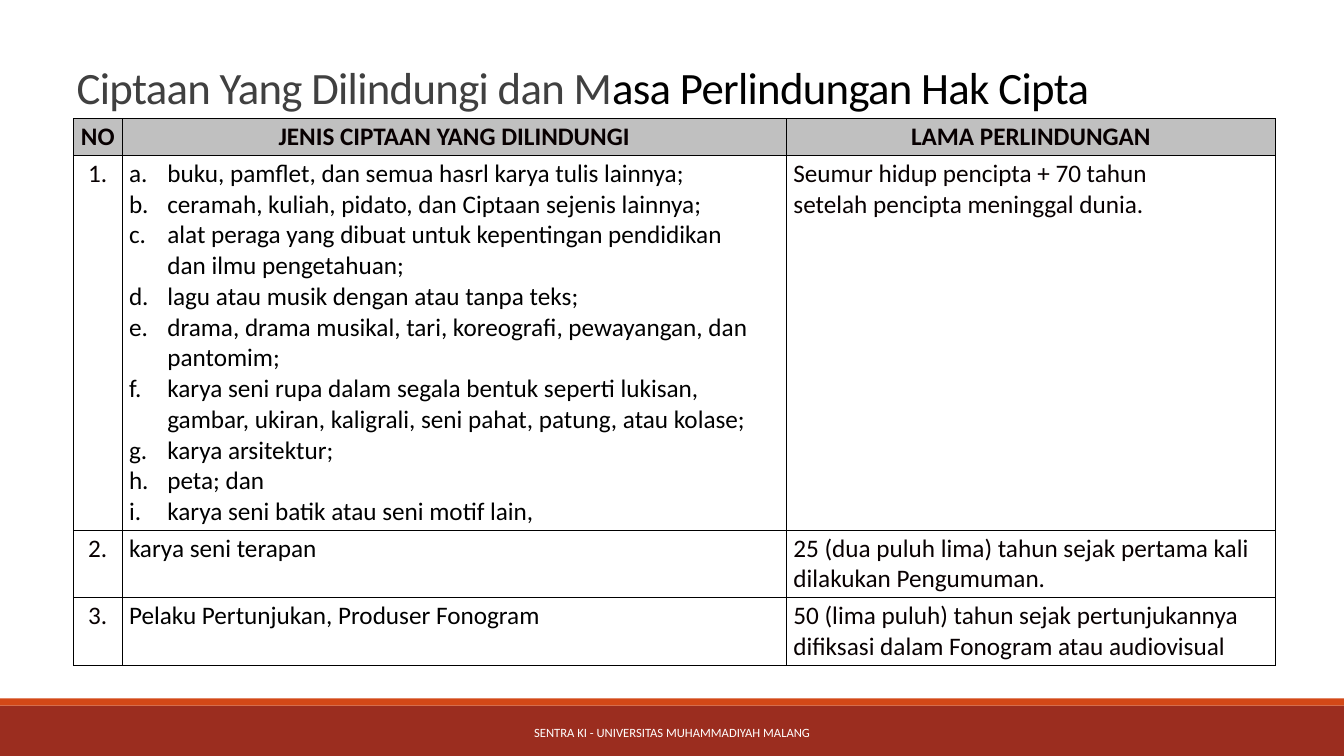
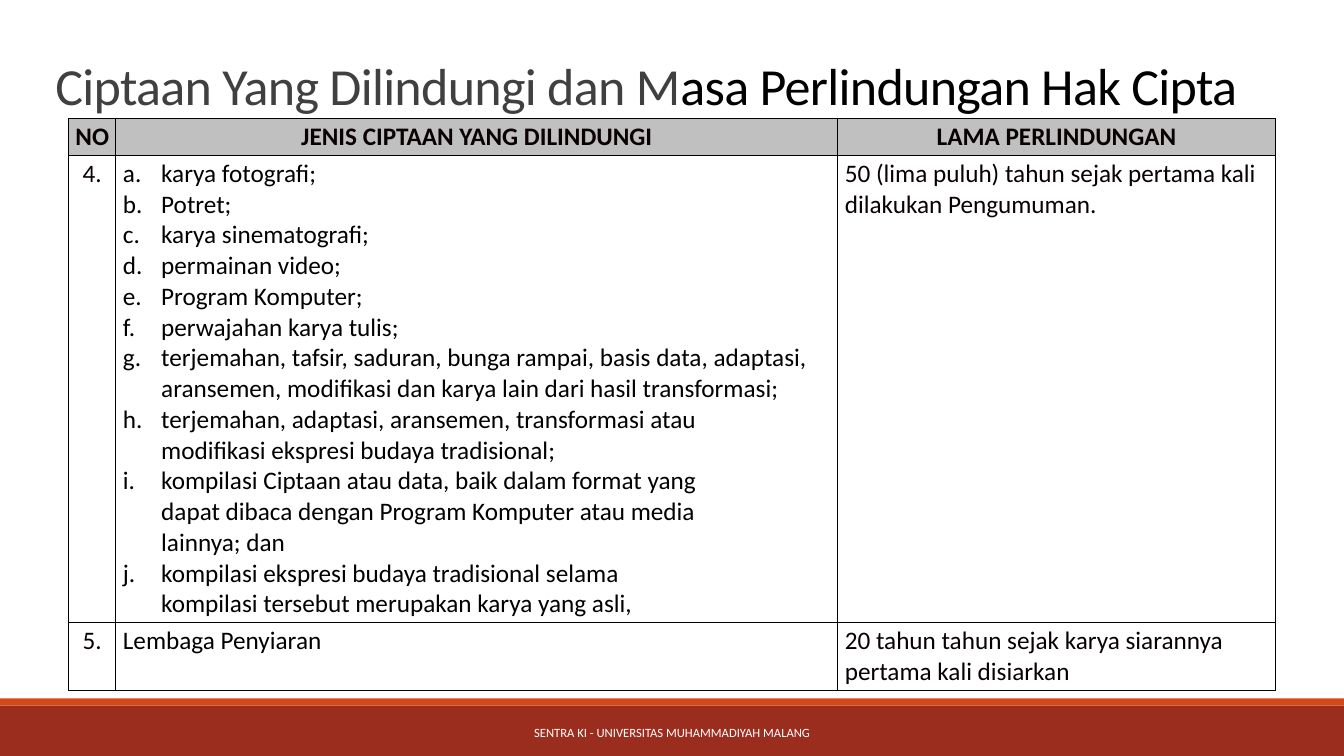
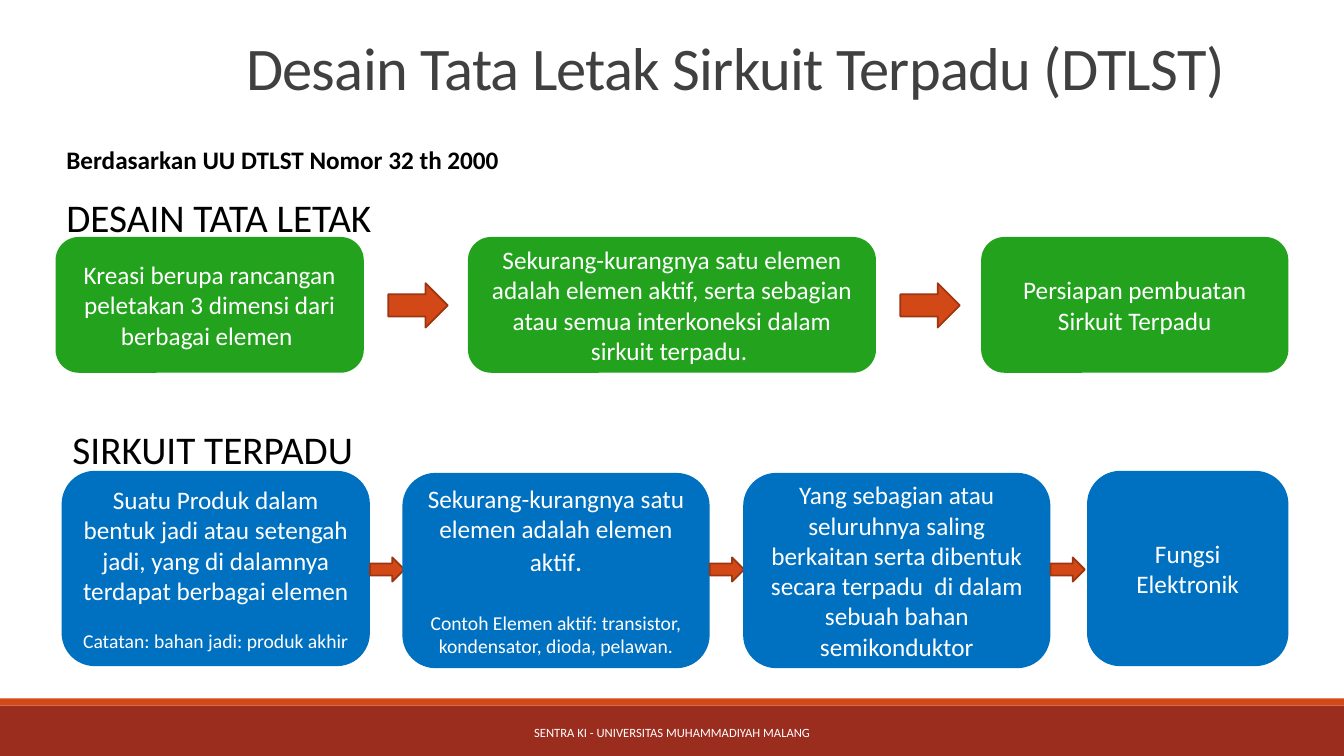
from lxml import etree
from pptx import Presentation
from pptx.dml.color import RGBColor
from pptx.enum.shapes import MSO_SHAPE
from pptx.enum.text import MSO_ANCHOR, MSO_AUTO_SIZE, PP_ALIGN
from pptx.oxml.ns import qn
from pptx.util import Pt

RECT, ROUND, ARROW = MSO_SHAPE.RECTANGLE, MSO_SHAPE.ROUNDED_RECTANGLE, MSO_SHAPE.RIGHT_ARROW
TOP, MIDDLE, BOTTOM = MSO_ANCHOR.TOP, MSO_ANCHOR.MIDDLE, MSO_ANCHOR.BOTTOM
LEFT, CENTER = PP_ALIGN.LEFT, PP_ALIGN.CENTER
NO_FIT = MSO_AUTO_SIZE.NONE

FONT = "Calibri"
SLIDE_W, SLIDE_H = 1333, 750
COLORS = {
    "black": "000000", "white": "FFFFFF", "ink": "080001", "title": "404040",
    "band": "9B2D1F", "accent": "D34817", "accent_line": "9C3511",
    "header": "C0C0C0", "green": "23A31D", "blue": "0070C0",
}
FOOTER = "SENTRA KI - UNIVERSITAS MUHAMMADIYAH MALANG"


def px(n):
    """100 px to the inch."""
    return round(n * 9144)


def rgb(name):
    return RGBColor.from_string(COLORS[name])


def hard(text):
    """Keep words together with no-break spaces."""
    return text.replace(" ", chr(160))


# ---- Building blocks ----
def add_text(p, text, size=18, color="black", bold=False, spc=None,
             align=LEFT, before=0, spacing=None):
    p.alignment = align
    p.space_before = Pt(before)
    if spacing:
        p.line_spacing = spacing
    for i, line in enumerate(text.split("\n")):
        if i:
            p.add_line_break()
        r = p.add_run()
        r.text = line
        r.font.name, r.font.size, r.font.bold = FONT, Pt(size), bold
        r.font.color.rgb = rgb(color)
        if spc is not None:
            r._r.get_or_add_rPr().set("spc", str(spc))


def next_paragraph(tf, i):
    return tf.add_paragraph() if i else tf.paragraphs[0]


def add_box(s, kind, box, fill, line=None):
    sp = s.shapes.add_shape(kind, *map(px, box))
    sp.shadow.inherit = False
    sp.fill.solid()
    sp.fill.fore_color.rgb = rgb(fill)
    if line:
        sp.line.color.rgb = rgb(line)
        sp.line.width = Pt(1.25)
    else:
        sp.line.fill.background()
    return sp


def add_label(s, box, text, anchor=TOP, wrap=True, **fmt):
    tf = s.shapes.add_textbox(*map(px, box)).text_frame
    tf.word_wrap, tf.vertical_anchor = wrap, anchor
    add_text(tf.paragraphs[0], text, **fmt)


# ---- Shared frame ----
def add_bands(prs, s):
    """Draw the bottom bands and move them to the master."""
    tree = prs.slide_master.shapes.element
    for i, (top, height, fill) in enumerate([(700, 50, "band"), (693, 7, "accent")]):
        el = add_box(s, RECT, (0, top, SLIDE_W, height), fill).element
        el.nvSpPr.cNvPr.set("id", str(101 + i))
        tree.insert(2 + i, el)


def new_slide(prs, title_box, runs, size, spacing=0.85):
    s = prs.slides.add_slide(prs.slide_layouts.get_by_name("Title Only"))
    title = s.shapes.title
    title.left, title.top, title.width, title.height = map(px, title_box)
    tf = title.text_frame
    tf.auto_size, tf.word_wrap, tf.vertical_anchor = NO_FIT, True, BOTTOM
    for text, color in runs:
        add_text(tf.paragraphs[0], text, size=size, color=color, spc=-50, spacing=spacing)
    add_label(s, (403, 707, 527, 40), FOOTER, anchor=MIDDLE, size=9, color="white", align=CENTER)
    return s


# ---- Table of protected works ----
def set_borders(cell):
    tc_pr = cell._tc.get_or_add_tcPr()
    for side in ("lnL", "lnR", "lnT", "lnB"):
        ln = etree.SubElement(tc_pr, qn(f"a:{side}"), w=str(Pt(0.75)))
        fill = etree.SubElement(ln, qn("a:solidFill"))
        etree.SubElement(fill, qn("a:srgbClr"), val=COLORS["black"])


def set_lettered(p):
    p_pr = p._p.get_or_add_pPr()
    p_pr.set("marL", str(px(38)))
    p_pr.set("indent", str(-px(38)))
    etree.SubElement(p_pr, qn("a:buFont"), typeface="+mj-lt")
    etree.SubElement(p_pr, qn("a:buAutoNum"), type="alphaLcPeriod")


def fill_cell(cell, content, header, column):
    set_borders(cell)
    cell.margin_left = cell.margin_right = px(7 if column else 5)
    cell.margin_top = cell.margin_bottom = px(3)
    cell.vertical_anchor = MIDDLE if header else TOP
    if header:
        cell.fill.solid()
        cell.fill.fore_color.rgb = rgb("header")
    else:
        cell.fill.background()
    lettered = isinstance(content, list)
    for i, text in enumerate(content if lettered else [content]):
        p = next_paragraph(cell.text_frame, i)
        add_text(p, text, bold=header, align=CENTER if header or column == 0 else LEFT,
                 color="black" if column == 1 and not header else "ink")
        if lettered:
            set_lettered(p)


def add_works_table(s, left, top, widths, heights, rows):
    header = ("NO", hard("JENIS CIPTAAN YANG DILINDUNGI"), hard("LAMA PERLINDUNGAN"))
    table = s.shapes.add_table(len(heights), len(widths), px(left), px(top),
                               px(sum(widths)), px(sum(heights))).table
    table.first_row = table.horz_banding = False
    for column, width in zip(table.columns, widths):
        column.width = px(width)
    for row, height in zip(table.rows, heights):
        row.height = px(height)
    for i, row in enumerate([header, *rows]):
        for j, content in enumerate(row):
            fill_cell(table.cell(i, j), content, i == 0, j)


# ---- Row of steps joined by block arrows ----
def add_flow(s, left, top, height, color, steps, arrow):
    """steps: (x, y, width, paragraphs); arrow: (gap, width, height)."""
    gap, arrow_w, arrow_h = arrow
    for i, (x, y, width, paragraphs) in enumerate(steps):
        tf = add_box(s, ROUND, (left + x, top + y, width, height), color, color).text_frame
        tf.word_wrap, tf.vertical_anchor = True, MIDDLE
        for k, runs in enumerate(paragraphs):
            p = next_paragraph(tf, k)
            for text, fmt in runs:
                add_text(p, text, color="white", align=CENTER, **fmt)
        if i < len(steps) - 1:
            add_box(s, ARROW, (left + x + width + gap, top + (height - arrow_h) // 2 + 1,
                               arrow_w, arrow_h), "accent", "accent_line")


# ---- Slides ----
WORKS_TITLE = [("Ciptaan Yang Dilindungi dan M", "title"),
               ("asa Perlindungan Hak Cipta", "black")]


def works_slide_1(prs):
    s = new_slide(prs, (66, 26, 1202, 92), WORKS_TITLE, 32)
    add_works_table(s, 73, 118, (48, 659, 485), (36, 372, 67, 67), [
        ("1.", [
            "buku, pamflet, dan semua hasrl karya tulis lainnya;",
            "ceramah, kuliah, pidato, dan Ciptaan sejenis lainnya;",
            "alat peraga yang dibuat untuk kepentingan pendidikan\ndan ilmu pengetahuan;",
            "lagu atau musik dengan atau tanpa teks;",
            "drama, drama musikal, tari, koreografi, pewayangan, dan pantomim;",
            "karya seni rupa dalam segala bentuk seperti lukisan, gambar, ukiran, "
            "kaligrali, seni pahat, patung, atau kolase;",
            "karya arsitektur;",
            "peta; dan",
            "karya seni batik atau seni motif lain,",
        ], " ".join([hard("Seumur hidup pencipta + 70 tahun"),
                     hard("setelah pencipta meninggal"), "dunia."])),
        ("2.", "karya seni terapan",
         "25 (dua puluh lima) tahun sejak pertama kali dilakukan Pengumuman."),
        ("3.", "Pelaku Pertunjukan, Produser Fonogram",
         "50 (lima puluh) tahun sejak pertunjukannya difiksasi dalam Fonogram atau audiovisual"),
    ])
    return s


def works_slide_2(prs):
    s = new_slide(prs, (45, 26, 1222, 92), WORKS_TITLE, 37.2, 0.65)
    add_works_table(s, 68, 118, (47, 716, 434), (36, 464, 67), [
        ("4.", [
            "karya fotografi;",
            "Potret;",
            "karya sinematografi;",
            "permainan video;",
            "Program Komputer;",
            "perwajahan karya tulis;",
            "terjemahan, tafsir, saduran, bunga rampai, basis data, adaptasi, "
            "aransemen, modifikasi dan karya lain dari hasil transformasi;",
            "terjemahan, adaptasi, aransemen, transformasi atau\n"
            "modifikasi ekspresi budaya tradisional;",
            "kompilasi Ciptaan atau data, baik dalam format yang\n"
            "dapat dibaca dengan Program Komputer atau media\nlainnya; dan",
            "kompilasi ekspresi budaya tradisional selama\n"
            "kompilasi tersebut merupakan karya yang asli,",
        ], "50 (lima puluh) tahun sejak pertama kali dilakukan Pengumuman."),
        ("5.", "Lembaga Penyiaran",
         "20 tahun tahun sejak karya siarannya pertama kali disiarkan"),
    ])


def circuit_slide(prs):
    s = new_slide(prs, (234, 32, 1099, 75),
                  [("Desain Tata Letak Sirkuit Terpadu (DTLST)", "title")], 43.2)
    add_label(s, (56, 138, 453, 40), "Berdasarkan UU DTLST Nomor 32 th 2000",
              wrap=False, bold=True)

    # Layout design
    add_flow(s, 56, 236, 133, "green", [
        (0, 0, 304, [[("Kreasi berupa rancangan peletakan 3 dimensi dari berbagai elemen ", {})]]),
        (409, 0, 403, [[("Sekurang-kurangnya satu elemen adalah elemen aktif, serta sebagian "
                         "atau semua interkoneksi dalam sirkuit terpadu. ", {})]]),
        (918, 0, 303, [[("Persiapan pembuatan Sirkuit Terpadu", {})]]),
    ], (25, 59, 44))
    add_label(s, (56, 187, 326, 57), "DESAIN TATA LETAK", wrap=False, size=28)

    # Integrated circuit
    add_flow(s, 62, 468, 192, "blue", [
        (0, 0, 304, [
            [("Suatu Produk dalam bentuk jadi atau setengah jadi, "
              "yang di dalamnya terdapat berbagai elemen", {})],
            [("Catatan: bahan jadi: produk akhir", {"size": 14, "before": 17})]]),
        (338, 2, 303, [
            [("Sekurang-kurangnya satu elemen adalah elemen aktif", {}), (".", {"size": 20})],
            [("Contoh Elemen aktif: transistor, kondensator, dioda, pelawan.",
              {"size": 14, "before": 24})]]),
        (676, 2, 303, [[("Yang sebagian atau seluruhnya saling berkaitan serta dibentuk "
                         "secara terpadu  di dalam sebuah bahan semikonduktor", {})]]),
        (1017, 0, 198, [[("Fungsi Elektronik", {})]]),
    ], (1, 34, 24))
    add_label(s, (62, 417, 375, 57), "SIRKUIT TERPADU", size=28)


def main():
    prs = Presentation()
    prs.slide_width, prs.slide_height = px(SLIDE_W), px(SLIDE_H)
    add_bands(prs, works_slide_1(prs))
    works_slide_2(prs)
    circuit_slide(prs)
    prs.save("out.pptx")


if __name__ == "__main__":
    main()
